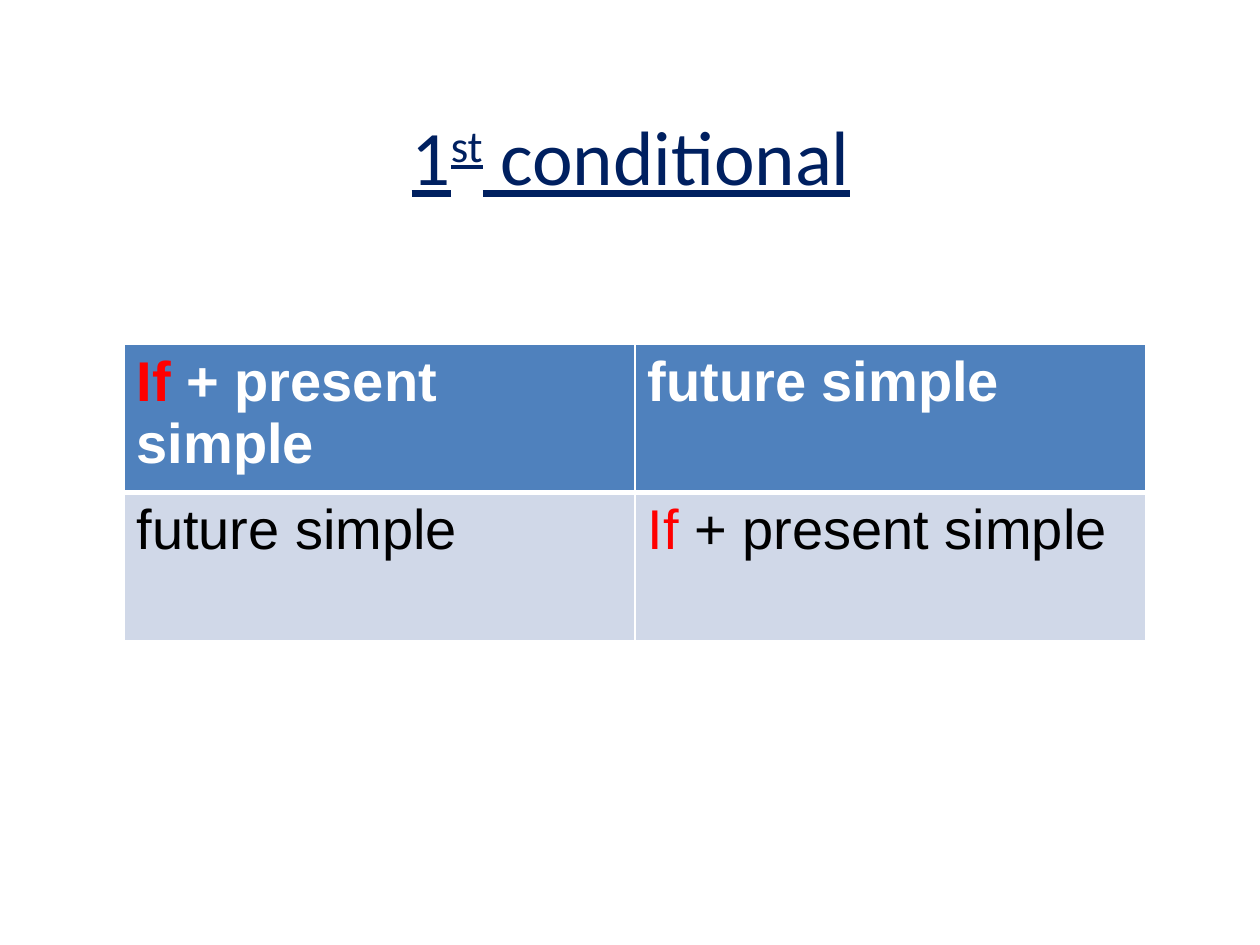
from dataclasses import dataclass
from typing import Any

from lxml.etree import SubElement
from pptx import Presentation
from pptx.dml.color import RGBColor
from pptx.enum.text import MSO_ANCHOR, PP_ALIGN
from pptx.oxml.ns import qn
from pptx.util import Emu, Pt

NAVY = RGBColor(0x00, 0x20, 0x60)
RED = RGBColor(0xFF, 0x00, 0x00)
WHITE = RGBColor(0xFF, 0xFF, 0xFF)
BLACK = RGBColor(0x00, 0x00, 0x00)
BLUE = RGBColor(0x4F, 0x81, 0xBD)
PALE_BLUE = RGBColor(0xD0, 0xD8, 0xE8)

PX_PER_INCH = 126


def px(n):
    return Emu(round(n * 914400 / PX_PER_INCH))


@dataclass
class SlideBuilder:
    s: Any
    title_font: str = "Calibri"
    title_size: int = 44
    table_font: str = "Arial"
    table_size: int = 32

    def run(self, p, text, font, size, color, bold=False):
        r = p.add_run()
        r.text = text
        r.font.name = font
        r.font.size = Pt(size)
        r.font.color.rgb = color
        r.font.bold = bold
        return r

    def title(self, x, y, w, h, parts):
        """Add an underlined title from (text, superscript percent) parts."""
        tf = self.s.shapes.add_textbox(px(x), px(y), px(w), px(h)).text_frame
        tf.word_wrap = True
        tf.vertical_anchor = MSO_ANCHOR.MIDDLE
        p = tf.paragraphs[0]
        p.alignment = PP_ALIGN.CENTER
        for text, raised in parts:
            r = self.run(p, text, self.title_font, self.title_size, NAVY)
            r.font.underline = True
            if raised:
                r.font._element.set("baseline", str(raised * 1000))

    def borders(self, cell, widths):
        """Draw white cell borders, widths in points for left, right, top, bottom."""
        tc_pr = cell._tc.get_or_add_tcPr()
        for side, width in zip("LRTB", widths):
            ln = SubElement(tc_pr, qn(f"a:ln{side}"), w=str(Pt(width)))
            fill = SubElement(ln, qn("a:solidFill"))
            SubElement(fill, qn("a:srgbClr"), val=str(WHITE))

    def table(self, x, y, w, h, rows):
        """Add a table with a header row; each cell is a list of (text, color or None)."""
        table = self.s.shapes.add_table(
            len(rows), len(rows[0]), px(x), px(y), px(w), px(h)).table
        for i, row in enumerate(rows):
            header = i == 0
            for j, parts in enumerate(row):
                cell = table.cell(i, j)
                self.borders(cell, (1, 1, 1, 3) if header else (1, 1, 3, 1))
                cell.fill.solid()
                cell.fill.fore_color.rgb = BLUE if header else PALE_BLUE
                for text, color in parts:
                    self.run(cell.text_frame.paragraphs[0], text,
                             self.table_font, self.table_size,
                             color or (WHITE if header else BLACK), header)


def main():
    prs = Presentation()
    prs.slide_width, prs.slide_height = px(1260), px(945)
    b = SlideBuilder(prs.slides.add_slide(prs.slide_layouts[6]))

    b.title(64, 76, 1134, 158, [("1", 0), ("st", 30), (" conditional", 0)])

    condition = [("If ", RED), ("+ present simple", None)]
    result = [("future simple", None)]
    b.table(124, 344, 1022, 297, [[condition, result], [result, condition]])

    prs.save("out.pptx")


if __name__ == "__main__":
    main()
